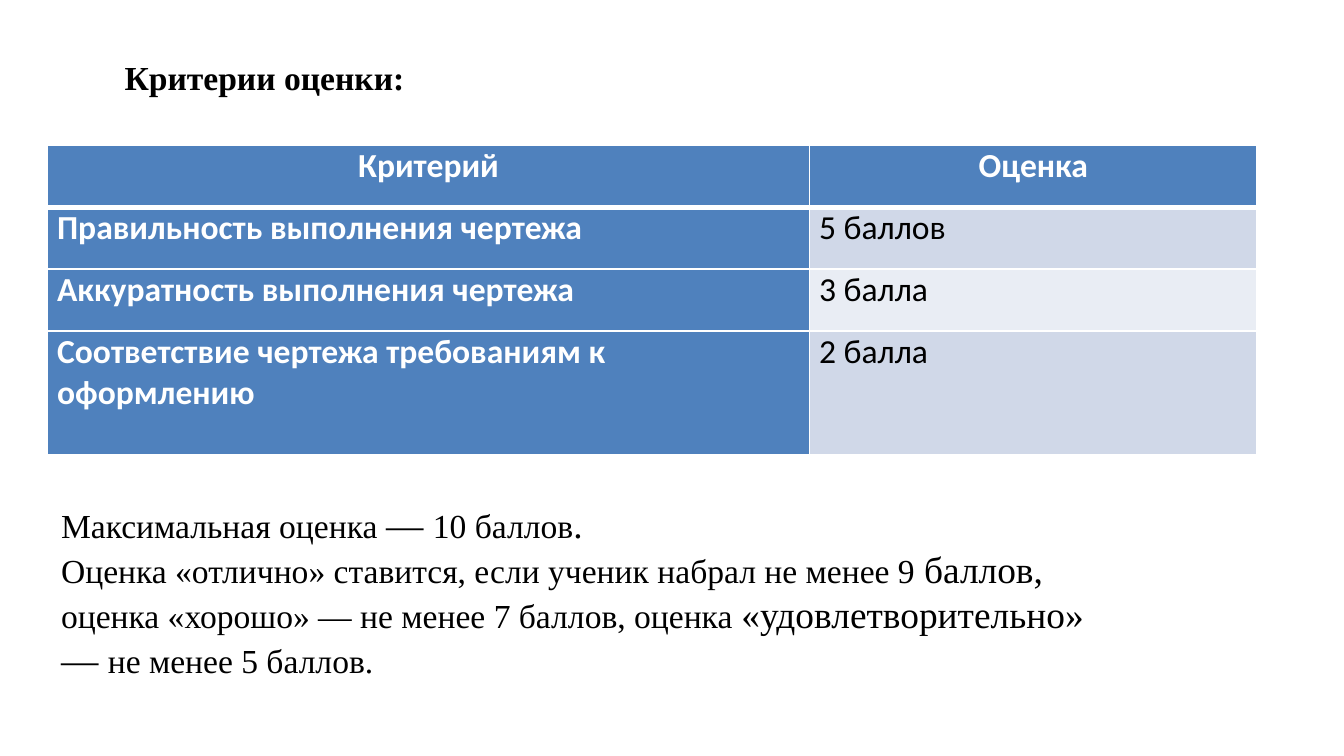
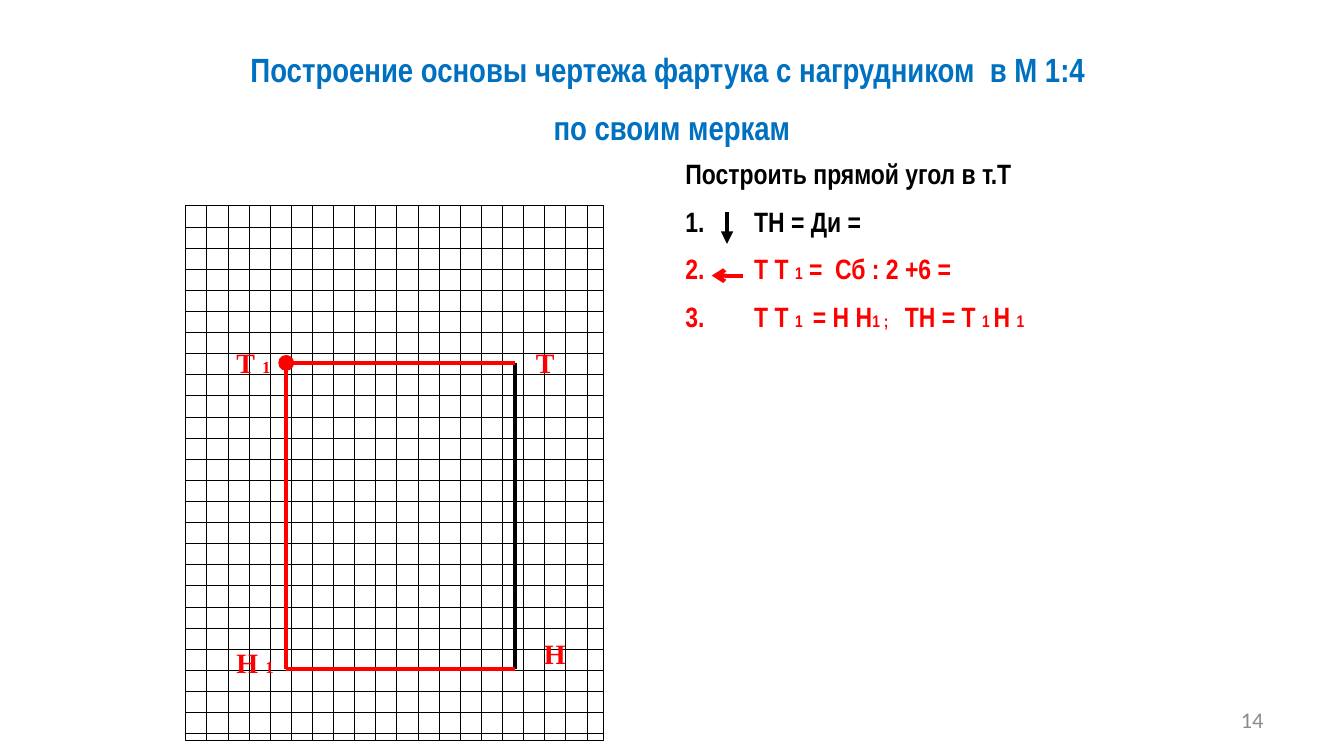
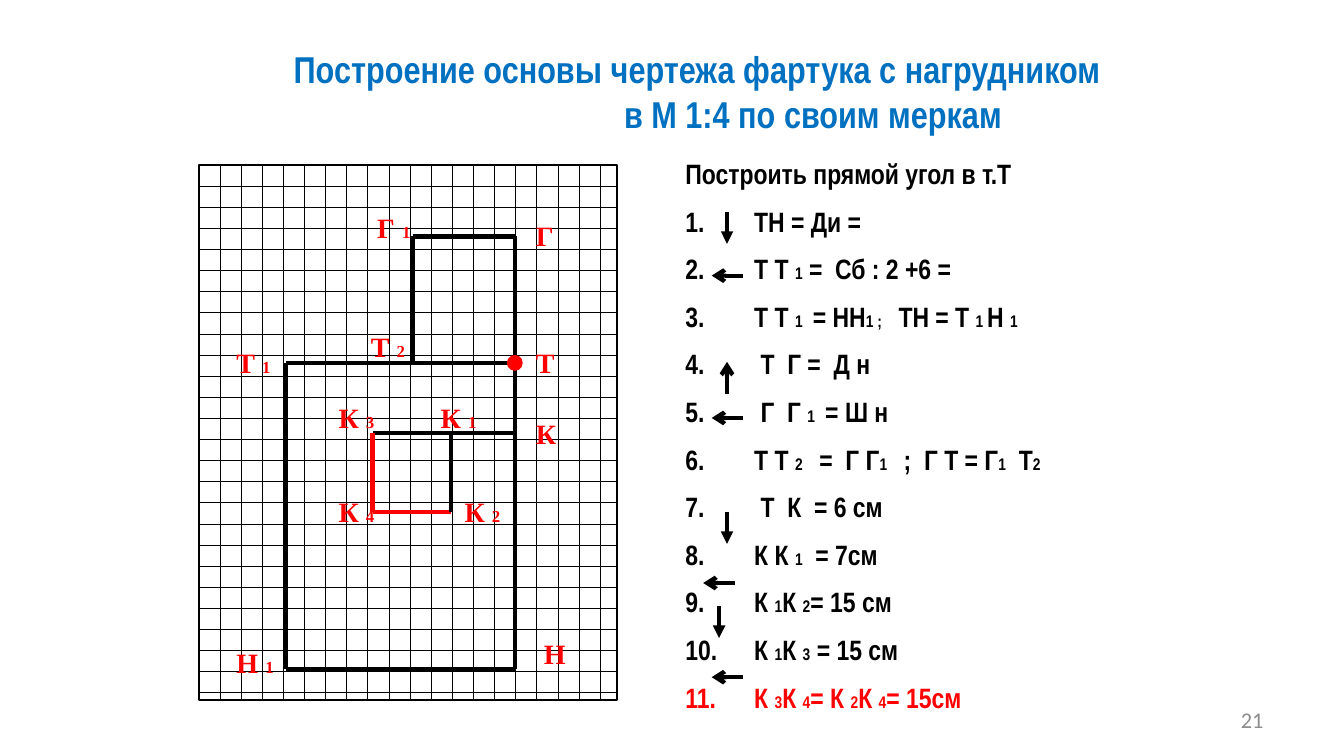
from dataclasses import dataclass

from lxml.etree import SubElement as Sub
from pptx import Presentation
from pptx.dml.color import RGBColor as Rgb
from pptx.enum.dml import MSO_PATTERN as Pat
from pptx.enum.shapes import MSO_CONNECTOR as Con, MSO_SHAPE as Geo
from pptx.enum.text import MSO_ANCHOR as Anc, MSO_AUTO_SIZE as Auto, PP_ALIGN as Al
from pptx.oxml.ns import qn
from pptx.util import Cm, Pt

BLACK, WHITE, RED = "000000", "FFFFFF", "FF0000"
BLUE, GREY, HEAD = "0070C0", "8C8C8C", "4F81BD"
BANDS = ("D0D8E8", "E9EDF4")
SERIF, SANS, NARROW = "Times New Roman", "Calibri", "Arial Narrow"
HANG = 1.3
STEP = 0.6


@dataclass
class Para:
    text: str
    color: str = BLACK
    left: float = 0
    right: float = 0
    num: bool = False


@dataclass
class Point:
    x: float
    y: float
    tag: str
    left: float
    top: float


@dataclass
class Edge:
    start: str
    end: str
    color: str = BLACK


@dataclass
class Arrow:
    x: float
    y: float
    way: str
    color: str = BLACK


POINTS = {
    "Т": Point(9.73, 6.86, "Т", 9.88, 6.4),
    "Т1": Point(5.41, 6.86, "Т _1", 4.22, 6.4),
    "Т2": Point(7.8, 6.86, "Т _2", 6.76, 6.1),
    "Н": Point(9.73, 12.65, "Н", 10.03, 11.91),
    "Н1": Point(5.41, 12.65, "Н _1", 4.22, 12.07),
    "Г": Point(9.73, 4.47, "Г", 9.88, 4.01),
    "Г1": Point(7.8, 4.47, "Г _1", 6.88, 3.86),
    "К": Point(9.73, 8.18, "К", 9.88, 7.75),
    "К1": Point(8.53, 8.18, "К _1", 8.08, 7.44),
    "К2": Point(8.53, 9.68, "К _2", 8.53, 9.22),
    "К3": Point(7.04, 8.18, "К _3", 6.15, 7.44),
    "К4": Point(7.04, 9.68, "К _4", 6.15, 9.22),
}
WAYS = {
    "down": (0, STEP, "triangle"),
    "left": (-STEP, 0, "arrow"),
    "up": (0, -STEP, "arrow"),
}


def rgb(code: str) -> Rgb:
    return Rgb.from_string(code)


def write(frame, paras: list[Para], *, font: str, size: float, alt: float = 9,
          bold: bool = True, align=Al.LEFT, gap: float = 0,
          anchor=Anc.TOP, wrap: bool = True) -> None:
    frame.word_wrap = wrap
    frame.auto_size = Auto.NONE
    frame.vertical_anchor = anchor
    for i, para in enumerate(paras):
        line = frame.paragraphs[0] if i == 0 else frame.add_paragraph()
        line.alignment = align
        line.space_before = Pt(gap if i else 0)
        props = line._p.get_or_add_pPr()
        props.set("marL", str(Cm(HANG if para.num else para.left)))
        props.set("indent", str(Cm(-HANG if para.num else 0)))
        props.set("marR", str(Cm(para.right)))
        if para.num:
            Sub(props, qn("a:buFont")).set("typeface", "+mj-lt")
            Sub(props, qn("a:buAutoNum")).set("type", "arabicPeriod")
        else:
            Sub(props, qn("a:buNone"))
        for j, part in enumerate(para.text.split("_")):
            if part:
                run = line.add_run()
                run.text = part
                run.font.name = font
                run.font.size = Pt(alt if j % 2 else size)
                run.font.bold = bold
                run.font.color.rgb = rgb(para.color)


def place(shape, x: float, y: float, w: float, h: float) -> None:
    shape.left, shape.top, shape.width, shape.height = Cm(x), Cm(y), Cm(w), Cm(h)


def label(slide, text: str, x: float, y: float, w: float, h: float,
          color: str, **form) -> None:
    box = slide.shapes.add_textbox(Cm(x), Cm(y), Cm(w), Cm(h))
    write(box.text_frame, [Para(text, color)], **form)


def stroke(slide, x: float, y: float, dx: float, dy: float, color: str,
           tip: str = "") -> None:
    line = slide.shapes.add_connector(Con.STRAIGHT, Cm(x), Cm(y), Cm(x + dx), Cm(y + dy))
    line.line.color.rgb = rgb(color)
    line.line.width = Pt(2.25)
    props = line.element.spPr
    if tip:
        Sub(props.find(qn("a:ln")), qn("a:tailEnd")).set("type", tip)
    Sub(props, qn("a:effectLst"))


def grid(slide, x: float, y: float) -> None:
    sheet = slide.shapes.add_shape(Geo.RECTANGLE, Cm(x), Cm(y), Cm(7.9), Cm(10.11))
    sheet.shadow.inherit = False
    sheet.fill.patterned()
    sheet.fill.pattern = Pat.DOTTED_GRID
    sheet.fill.fore_color.rgb = rgb(BLACK)
    sheet.fill.back_color.rgb = rgb(WHITE)
    sheet.line.color.rgb = rgb(BLACK)
    sheet.line.width = Pt(0.75)


def draft(slide, edges: list[Edge], names: list[str], focus: str,
          arrows: list[Arrow]) -> None:
    for edge in edges:
        a, b = POINTS[edge.start], POINTS[edge.end]
        stroke(slide, a.x, a.y, b.x - a.x, b.y - a.y, edge.color)
    spot = POINTS[focus]
    dot = slide.shapes.add_shape(Geo.FLOWCHART_CONNECTOR, Cm(spot.x - 0.15),
                                 Cm(spot.y - 0.15), Cm(0.3), Cm(0.3))
    dot.shadow.inherit = False
    dot.fill.solid()
    dot.fill.fore_color.rgb = rgb(RED)
    dot.line.fill.background()
    for name in names:
        p = POINTS[name]
        label(slide, p.tag, p.left, p.top, 1.19 if "_" in p.tag else 0.87, 0.89,
              RED, font=SERIF, size=15, wrap=False)
    for arrow in arrows:
        dx, dy, tip = WAYS[arrow.way]
        stroke(slide, arrow.x, arrow.y, dx, dy, arrow.color, tip)


def steps(slide, items: list[Para], high: float) -> None:
    body = slide.placeholders[1]
    place(body, 12.7, 2.83, 8.33, high)
    write(body.text_frame, [Para("Построить прямой угол в т.Т"), *items],
          font=NARROW, size=15, gap=7.5)


def page(slide, number: str) -> None:
    label(slide, number, 18.21, 13.23, 5.92, 0.76, GREY, font=SANS, size=12,
          bold=False, align=Al.RIGHT, anchor=Anc.MIDDLE)


def item(text: str, color: str = BLACK) -> Para:
    return Para(text, color, num=True)


def edge(cell, side: str, width: float) -> None:
    line = Sub(cell._tc.get_or_add_tcPr(), qn(f"a:ln{side}"))
    line.set("w", str(Pt(width)))
    Sub(Sub(line, qn("a:solidFill")), qn("a:srgbClr")).set("val", WHITE)


def marks(slide) -> None:
    rows = [
        ("Критерий", "Оценка"),
        ("Правильность выполнения чертежа", "5 баллов"),
        ("Аккуратность выполнения чертежа", "3 балла"),
        ("Соответствие чертежа требованиям к оформлению", "2 балла"),
    ]
    table = slide.shapes.add_table(4, 2, Cm(0.9), Cm(2.75), Cm(22.86), Cm(5.87)).table
    for col, wide in zip(table.columns, (14.4, 8.46)):
        col.width = Cm(wide)
    for r, row in enumerate(rows):
        table.rows[r].height = Cm(2.34 if r == 3 else 1.17)
        for c, text in enumerate(row):
            cell = table.cell(r, c)
            strong = r == 0 or c == 0
            cell.margin_left = cell.margin_right = Cm(0.18)
            cell.margin_top = cell.margin_bottom = 0
            write(cell.text_frame, [Para(text, WHITE if strong else BLACK)],
                  font=SANS, size=18, bold=strong, align=Al.LEFT if r else Al.CENTER)
            for side in "LRTB":
                edge(cell, side, 3 if (r, side) in ((0, "B"), (1, "T")) else 1)
            cell.fill.solid()
            cell.fill.fore_color.rgb = rgb(HEAD if strong else BANDS[(r - 1) % 2])


def rating(slide) -> None:
    place(slide.shapes.title, 2.1, 0.94, 5.87, 1.02)
    write(slide.shapes.title.text_frame, [Para("Критерии оценки:")],
          font=SERIF, size=18, wrap=False)
    marks(slide)
    body = slide.placeholders[1]
    place(body, 0.9, 9.35, 20.6, 3.68)
    write(body.text_frame, [
        Para("Максимальная оценка _— _10 баллов_."),
        Para("Оценка «отлично» ставится, если ученик набрал не менее 9 _баллов, _"
             "оценка «хорошо» — не менее 7 баллов, оценка _«удовлетворительно» — _"
             "не менее 5 баллов."),
    ], font=SERIF, size=18, alt=20, bold=False)


def base(slide) -> None:
    grid(slide, 3.51, 3.89)
    place(slide.shapes.title, 2.36, 0.8, 20.68, 3.45)
    write(slide.shapes.title.text_frame, [
        Para("Построение основы чертежа фартука с нагрудником  в М 1:4", BLUE, right=0.15),
        Para("по своим меркам", BLUE),
    ], font=NARROW, size=18, align=Al.CENTER, gap=9.5)
    steps(slide, [
        item("ТН = Ди ="),
        item("Т Т _1_ =  Сб : 2 +6 =", RED),
        item("Т Т _1 _ = Н Н_1 ; _  ТН = Т _1 _Н _1", RED),
    ], 3.78)
    page(slide, "14")
    draft(slide, [Edge("Т", "Н"), Edge("Т1", "Т", RED), Edge("Н1", "Н", RED),
                  Edge("Т1", "Н1", RED)],
          ["Т", "Н", "Т1", "Н1"], "Т1",
          [Arrow(13.74, 4.01, "down"), Arrow(14.05, 5.21, "left", RED)])


def pocket(slide) -> None:
    grid(slide, 3.76, 3.12)
    place(slide.shapes.title, 5.26, 0.74, 16.51, 1.96)
    write(slide.shapes.title.text_frame, [
        Para("Построение основы чертежа фартука с нагрудником", BLUE, right=0.68),
        Para("в М 1:4 по своим меркам", BLUE, left=3.7),
    ], font=NARROW, size=20, align=Al.CENTER, gap=0.5)
    steps(slide, [
        item("ТН = Ди ="),
        item("Т Т _1_ =  Сб : 2 +6 ="),
        item("Т Т _1 _ = НН_1 ; _  ТН = Т _1 _Н _1"),
        item(" Т  Г =  Д н"),
        item(" Г  Г _1 _ = Ш н"),
        item("Т Т _2 _  =  Г Г_1 _  ;  Г Т = Г_1_  Т_2"),
        item(" Т  К  = 6 см"),
        item("К К _1_  = 7см"),
        item("К _1_К _2_= 15 см"),
        item("К _1_К _3_ = 15 см"),
        item("К _3_К _4_= К _2_К _4_= 15см", RED),
    ], 11.46)
    page(slide, "21")
    draft(slide, [Edge("Т1", "Т"), Edge("Т", "Н"), Edge("Н1", "Н"), Edge("Т1", "Н1"),
                  Edge("Г", "Т"), Edge("Г1", "Г"), Edge("Г1", "Т2"), Edge("К3", "К"),
                  Edge("К4", "К2", RED), Edge("К3", "К4", RED), Edge("К1", "К2")],
          list(POINTS), "Т",
          [Arrow(13.74, 4.01, "down"), Arrow(14.05, 5.21, "left"),
           Arrow(13.74, 7.44, "up"), Arrow(14.05, 7.9, "left"),
           Arrow(13.74, 9.68, "down"), Arrow(13.89, 11.02, "left"),
           Arrow(13.59, 11.46, "down"), Arrow(14.05, 12.8, "left")])


def main() -> None:
    deck = Presentation()
    deck.slide_width, deck.slide_height = Cm(25.4), Cm(14.29)
    for build in (rating, base, pocket):
        build(deck.slides.add_slide(deck.slide_layouts[1]))
    deck.save("out.pptx")


if __name__ == "__main__":
    main()
